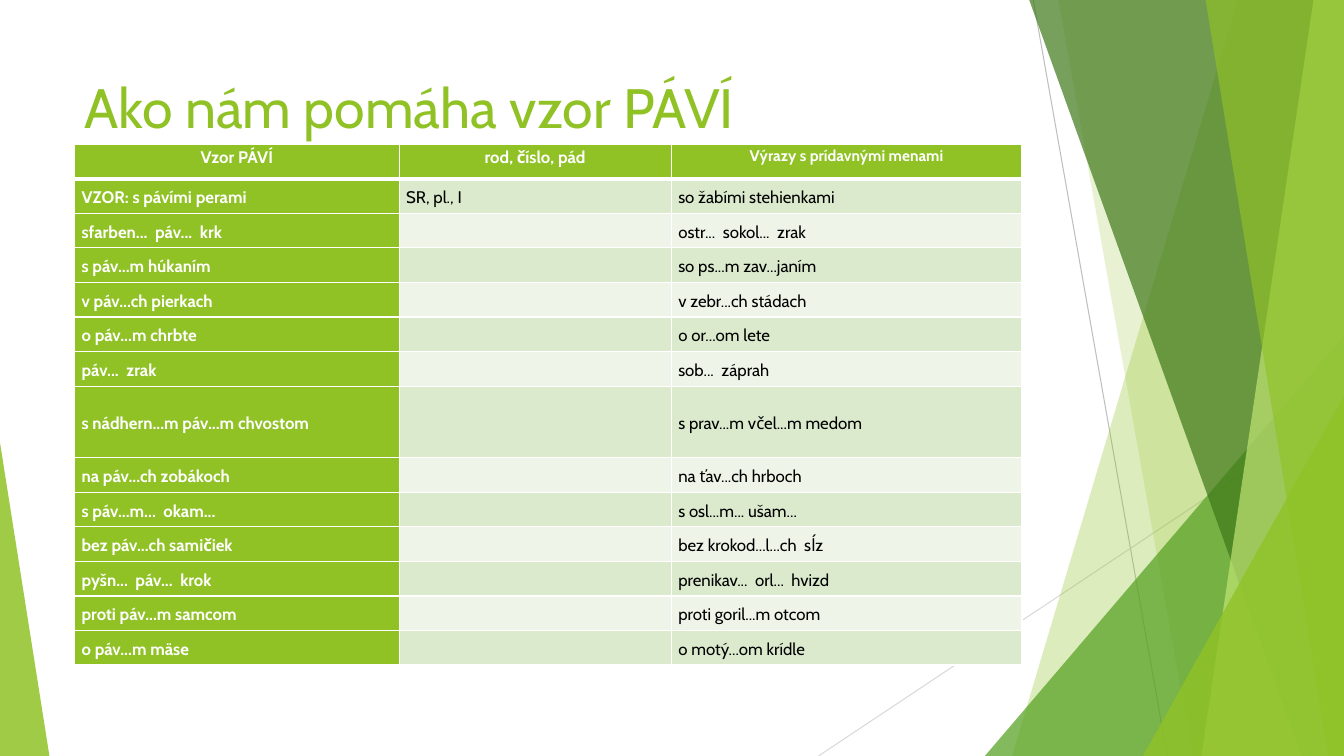
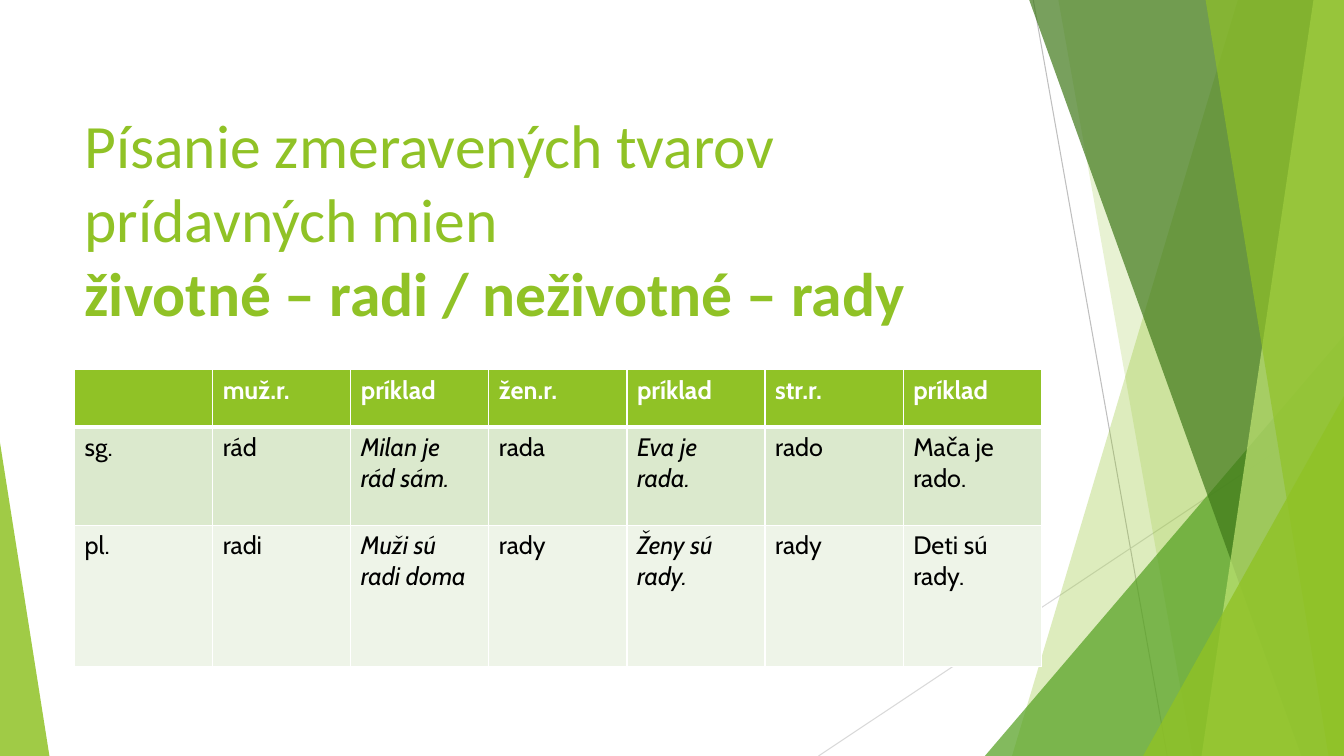
import pptx
import pptx.dml.color
import pptx.enum.shapes
import pptx.enum.text
import pptx.oxml.ns
import pptx.util
from lxml import etree
from dataclasses import dataclass

qn = pptx.oxml.ns.qn
Pt = pptx.util.Pt
MSO_SHAPE = pptx.enum.shapes.MSO_SHAPE
ANCHOR = pptx.enum.text.MSO_ANCHOR
ALIGN = pptx.enum.text.PP_ALIGN


@dataclass(frozen=True)
class Theme:
    lime: str = "90C226"
    green: str = "54A021"
    forest: str = "3F7819"
    pale: str = "C0E474"
    white: str = "FFFFFF"
    black: str = "000000"
    bands: tuple = ("DBE9CD", "EEF4E8")
    line_dark: str = "BFBFBF"
    line_light: str = "D9D9D9"
    font: str = "Cabin"
    title_font: str = "Calibri"
    hairline: float = 0.75
    border: float = 1
    head_border: float = 3


T = Theme()

# Positions are percentages of the slide's width and height
LEFT, TITLE_TOP, TITLE_WIDTH = 5.55, 8.93, 70.5

# Shared decoration
LINES = [(76.88, 0, 86.85, 100, T.line_dark), (100, 53.73, 60.9, 100, T.line_light)]
# Panels reach the right edge: top x, bottom x, colour, opacity
# Triangles: left, top, width, apex, colour, opacity
FACETS = [
    ("panel", (92.1, 75.3), T.lime, 30),
    ("panel", (78.75, 88.73), T.lime, 20),
    ("triangle", (73.28, 44.4, 26.72, 1), T.green, 72),
    ("panel", (76.58, 96.83), T.forest, 70),
    ("panel", (97.73, 89.4), T.pale, 70),
    ("panel", (89.7, 98.85), T.lime, 65),
    ("triangle", (85.05, 52.4, 14.95, 1), T.lime, 80),
    ("triangle", (0, 58.53, 3.68, 0), T.lime, 85),
]

# Slide content
SLIDES = [
    dict(
        title=[("Ako nám pomáha vzor PÁVÍ", False)],
        title_font=T.font, title_size=39.6, title_height=10.27,
        table=dict(
            top=19.07, width=70.5, height=68.93,
            cols=[3.22, 2.7, 3.48], rows=[1] * 7 + [2.07] + [1] * 6,
            size=12, head_sizes={2: 11}, compact=True, key_cols=1, italic_cols=(),
            cells=[
                ("Vzor PÁVÍ", "rod, číslo, pád", "Výrazy s prídavnými menami"),
                ("VZOR: s pávími perami", "SR, pl., I", "so žabími stehienkami"),
                ("sfarben...  páv...  krk", "", "ostr...  sokol...  zrak"),
                ("s páv...m húkaním", "", "so ps...m zav...janím"),
                ("v páv...ch pierkach", "", "v zebr...ch stádach"),
                ("o páv...m chrbte", "", "o or...om lete"),
                ("páv...  zrak", "", "sob...  záprah"),
                ("s nádhern...m páv...m chvostom", "", "s prav...m včel...m medom"),
                ("na páv...ch zobákoch", "", "na ťav...ch hrboch"),
                ("s páv...m...  okam...", "", "s osl...m... ušam..."),
                ("bez páv...ch samičiek", "", "bez krokod...l...ch  sĺz"),
                ("pyšn...  páv...  krok", "", "prenikav...  orl...  hvizd"),
                ("proti páv...m samcom", "", "proti goril...m otcom"),
                ("o páv...m mäse", "", "o motý...om krídle"),
            ],
        ),
    ),
    dict(
        title=[("Písanie zmeravených tvarov prídavných mien", False),
               ("životné – radi / neživotné – rady", True)],
        title_font=T.title_font, title_size=44, title_height=39.73,
        table=dict(
            top=48.93, width=71.93, height=39.2,
            cols=[1] * 7, rows=[0.57, 0.98, 1.4],
            size=18, head_sizes={}, compact=False, key_cols=0, italic_cols=(2, 4),
            cells=[
                ("", "muž.r.", "príklad", "žen.r.", "príklad", "str.r.", "príklad"),
                ("sg.", "rád", "Milan je rád sám.", "rada", "Eva je rada.", "rado",
                 "Mača je rado."),
                ("pl.", "radi", "Muži sú radi doma", "rady", "Ženy sú rady.", "rady",
                 "Deti sú rady."),
            ],
        ),
    ),
]

prs = pptx.Presentation()
prs.slide_width = pptx.util.Inches(13.33)
prs.slide_height = pptx.util.Inches(7.5)


def X(share):
    return round(prs.slide_width * share / 100)


def Y(share):
    return round(prs.slide_height * share / 100)


def rgb(value):
    return pptx.dml.color.RGBColor.from_string(value)


def add_run(p, text, font, size, color, bold=False, italic=False):
    r = p.add_run()
    r.text = text
    r.font.name, r.font.size = font, Pt(size)
    r.font.bold, r.font.italic = bold, italic
    r.font.color.rgb = rgb(color)


def add_line(shapes, x1, y1, x2, y2, color):
    line = shapes.add_connector(
        pptx.enum.shapes.MSO_CONNECTOR.STRAIGHT, X(x1), Y(y1), X(x2), Y(y2))
    line.line.color.rgb = rgb(color)
    line.line.width = Pt(T.hairline)
    etree.SubElement(line.element.spPr, qn("a:effectLst"))
    return line


def add_facet(shapes, kind, geometry, color, opacity):
    if kind == "panel":
        top_x, bottom_x = geometry
        outline = shapes.build_freeform(X(top_x), 0)
        outline.add_line_segments(
            [(X(100), 0), (X(100), Y(100)), (X(bottom_x), Y(100))], close=True)
        sp = outline.convert_to_shape()
    else:
        left, top, width, apex = geometry
        sp = shapes.add_shape(MSO_SHAPE.ISOSCELES_TRIANGLE,
                              X(left), Y(top), X(width), Y(100 - top))
        sp.adjustments[0] = apex
    sp.shadow.inherit = False
    sp.line.fill.background()
    sp.fill.solid()
    sp.fill.fore_color.rgb = rgb(color)
    tint = sp.element.spPr.find(qn("a:solidFill"))[0]
    etree.SubElement(tint, qn("a:alpha"), val=str(opacity * 1000))
    return sp


def decorate(layout, shapes):
    """Draw the decoration and hand it to the layout that the slides share."""
    for ph in list(layout.placeholders):
        layout.shapes.element.remove(ph.element)
    parts = [add_line(shapes, *line) for line in LINES]
    parts += [add_facet(shapes, *facet) for facet in FACETS]
    for part in parts:
        layout.shapes.element.append(part.element)


def add_title(shapes, content):
    box = shapes.add_textbox(X(LEFT), Y(TITLE_TOP), X(TITLE_WIDTH),
                             Y(content["title_height"]))
    tf = box.text_frame
    tf.word_wrap = True
    tf.vertical_anchor = ANCHOR.MIDDLE
    for i, (text, bold) in enumerate(content["title"]):
        p = tf.add_paragraph() if i else tf.paragraphs[0]
        add_run(p, text, content["title_font"], content["title_size"], T.lime, bold)


def set_borders(cell, row):
    widths = {"L": T.border, "R": T.border,
              "T": T.head_border if row == 1 else T.border,
              "B": T.head_border if row == 0 else T.border}
    tcPr = cell._tc.get_or_add_tcPr()
    for side, width in widths.items():
        ln = etree.SubElement(tcPr, qn("a:ln" + side), w=str(Pt(width)))
        fill = etree.SubElement(ln, qn("a:solidFill"))
        etree.SubElement(fill, qn("a:srgbClr"), val=T.white)


def fill_cell(cell, row, col, text, data):
    head = row == 0
    strong = head or col < data["key_cols"]
    size = data["head_sizes"].get(col, data["size"]) if head else data["size"]
    set_borders(cell, row)
    cell.fill.solid()
    cell.fill.fore_color.rgb = rgb(T.lime if strong else T.bands[(row - 1) % 2])
    p = cell.text_frame.paragraphs[0]
    if data["compact"]:
        cell.margin_left = cell.margin_right = pptx.util.Inches(0.07)
        cell.margin_top = cell.margin_bottom = 0
        cell.vertical_anchor = ANCHOR.TOP if head else ANCHOR.MIDDLE
        p.line_spacing, p.space_before = 1.15, Pt(6)
        if head:
            p.alignment, p.space_after = ALIGN.CENTER, Pt(6)
    if text:
        add_run(p, text, T.font, size, T.white if strong else T.black, strong,
                not head and col in data["italic_cols"])
    else:
        etree.SubElement(p._p, qn("a:endParaRPr"), sz=str(size * 100))


def add_grid(shapes, data):
    cols, rows = data["cols"], data["rows"]
    width, height = X(data["width"]), Y(data["height"])
    table = shapes.add_table(len(rows), len(cols), X(LEFT), Y(data["top"]),
                             width, height).table
    for column, share in zip(table.columns, cols):
        column.width = round(width * share / sum(cols))
    for line, share in zip(table.rows, rows):
        line.height = round(height * share / sum(rows))
    for row, texts in enumerate(data["cells"]):
        for col, text in enumerate(texts):
            fill_cell(table.cell(row, col), row, col, text, data)


def main():
    layout = prs.slide_layouts[6]
    for i, content in enumerate(SLIDES):
        shapes = prs.slides.add_slide(layout).shapes
        if i == 0:
            decorate(layout, shapes)
        add_title(shapes, content)
        add_grid(shapes, content["table"])
    prs.save("out.pptx")


if __name__ == "__main__":
    main()
